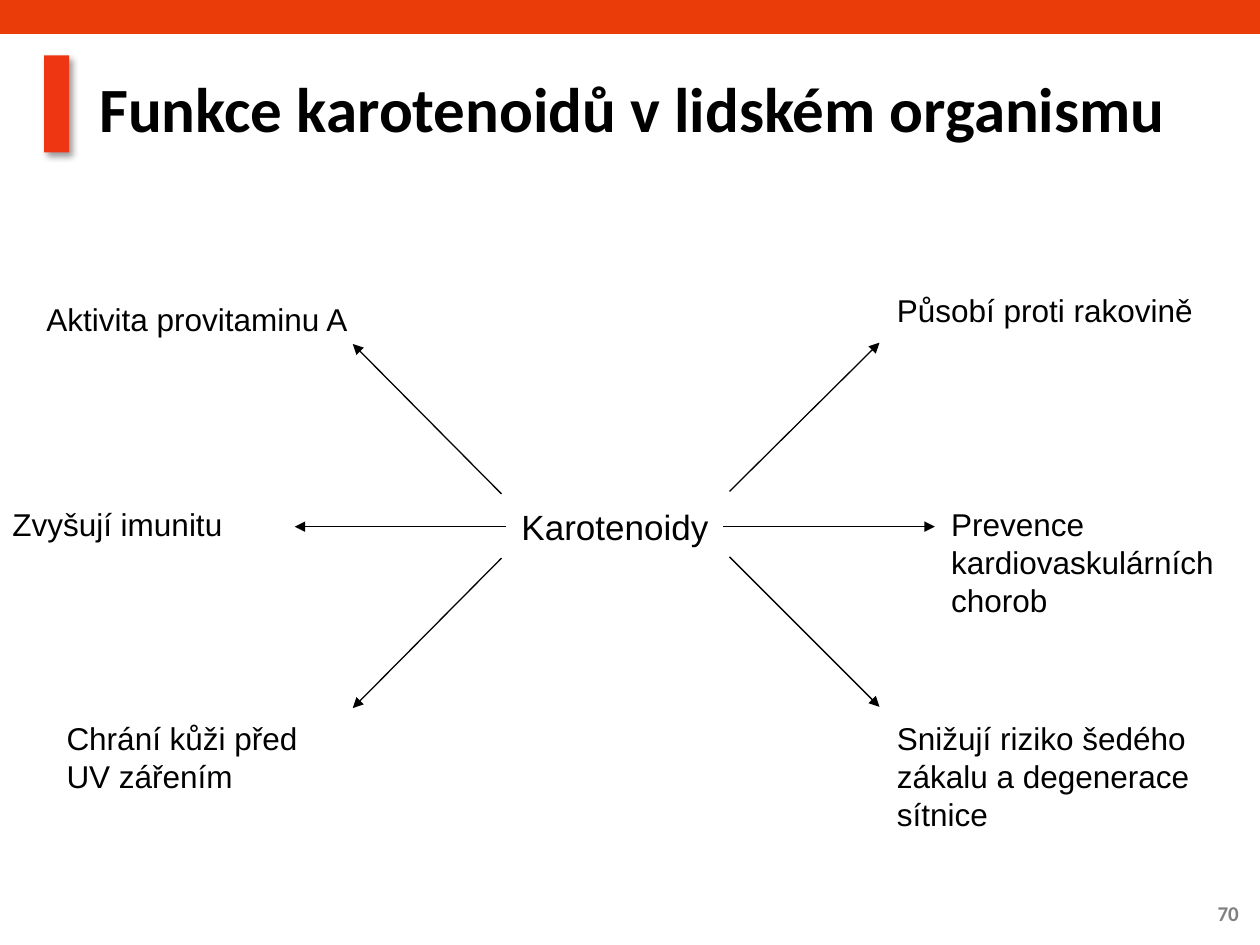
from dataclasses import dataclass

from lxml import etree
from pptx import Presentation
from pptx.dml.color import RGBColor
from pptx.enum import shapes, text
from pptx.oxml import parse_xml
from pptx.oxml.ns import nsdecls, qn
from pptx.util import Inches, Pt

COLS, ROWS = 100, 75
prs = Presentation()
prs.slide_width, prs.slide_height = Inches(10), Inches(7.5)
slide = prs.slides.add_slide(prs.slide_layouts[6])


@dataclass
class Box:
    col: float
    row: float
    cols: float
    rows: float


@dataclass
class Label:
    words: str
    box: Box
    size: int = 18
    font: str = "Arial"
    color: str = "000000"
    bold: bool = False
    align: text.PP_ALIGN = text.PP_ALIGN.LEFT
    anchor: text.MSO_ANCHOR = text.MSO_ANCHOR.TOP
    spacing: float = 1.0
    wrap: bool = True


@dataclass
class Arrow:
    start: tuple[float, float]
    end: tuple[float, float]


def rgb(color: str) -> RGBColor:
    return RGBColor.from_string(color)


def x(col: float) -> int:
    return round(prs.slide_width * col / COLS)


def y(row: float) -> int:
    return round(prs.slide_height * row / ROWS)


def place(box: Box) -> tuple[int, int, int, int]:
    return x(box.col), y(box.row), x(box.cols), y(box.rows)


def draw_bar(box: Box, color: str):
    sp = slide.shapes.add_shape(shapes.MSO_SHAPE.RECTANGLE, *place(box))
    sp.shadow.inherit = False
    sp.fill.solid()
    sp.fill.fore_color.rgb = rgb(color)
    sp.line.fill.background()
    return sp


def draw_label(label: Label) -> None:
    sp = slide.shapes.add_textbox(*place(label.box))
    tf = sp.text_frame
    tf.word_wrap = label.wrap
    tf.vertical_anchor = label.anchor
    p = tf.paragraphs[0]
    p.text = label.words
    p.alignment = label.align
    p.line_spacing = label.spacing
    p.font.name, p.font.size, p.font.bold = label.font, Pt(label.size), label.bold
    p.font.color.rgb = rgb(label.color)


def draw_arrow(arrow: Arrow) -> None:
    (c1, r1), (c2, r2) = arrow.start, arrow.end
    line = slide.shapes.add_connector(
        shapes.MSO_CONNECTOR.STRAIGHT, x(c1), y(r1), x(c2), y(r2))
    line.line.color.rgb = rgb("000000")
    line.line.width = Pt(0.75)
    etree.SubElement(line.line._get_or_add_ln(), qn("a:tailEnd"), type="triangle")
    etree.SubElement(line._element.spPr, qn("a:effectLst"))


def add_shadow(sp) -> None:
    effects = sp._element.spPr.find(qn("a:effectLst"))
    effects.append(parse_xml(
        f'<a:outerShdw {nsdecls("a")} blurRad="{Pt(4)}" dist="{Pt(3)}" '
        f'dir="{45 * 60000}" rotWithShape="0"><a:srgbClr val="000000">'
        '<a:alpha val="40000"/></a:srgbClr></a:outerShdw>'))


MIDDLE = text.MSO_ANCHOR.MIDDLE
LABELS = [
    Label("70", Box(92.5, 70.5, 6.8, 4), 12, "Calibri", "808080", True,
          text.PP_ALIGN.RIGHT, MIDDLE),
    Label("Funkce karotenoidů v\u00a0lidském organismu", Box(6.9, 4, 90.5, 9.8),
          36, "Calibri", bold=True, anchor=MIDDLE, spacing=0.9),
    Label("Karotenoidy", Box(40.4, 39.6, 19.1, 6.4), 20),
    Label("Působí proti rakovině", Box(70.2, 22.6, 29.8, 10.6)),
    Label("Prevence kardiovaskulárních chorob", Box(74.5, 39.6, 25.5, 12.8)),
    Label("Snižují riziko šedého zákalu a degenerace sítnice",
          Box(70.2, 56.6, 27.7, 12.8)),
    Label("Zvyšují imunitu", Box(0, 39.6, 23.4, 6.4)),
    Label("Chrání kůži před UV zářením", Box(4.3, 56.6, 23.4, 10.6)),
    Label("Aktivita provitaminu A", Box(2.7, 23.3, 26.7, 4), wrap=False),
]
ARROWS = [
    Arrow((57.4, 41.8), (74.2, 41.8)),
    Arrow((40.2, 41.8), (23.4, 41.8)),
    Arrow((57.9, 39), (69.8, 27.2)),
    Arrow((39.8, 39.2), (28, 27.3)),
    Arrow((39.8, 44.3), (28, 56.2)),
    Arrow((57.9, 44.2), (69.8, 56.1)),
]

draw_bar(Box(0, 0, COLS, 2.7), "E93C09")
add_shadow(draw_bar(Box(3.5, 4.4, 2, 7.7), "EE3712"))
for label in LABELS:
    draw_label(label)
for arrow in ARROWS:
    draw_arrow(arrow)

prs.save("out.pptx")
